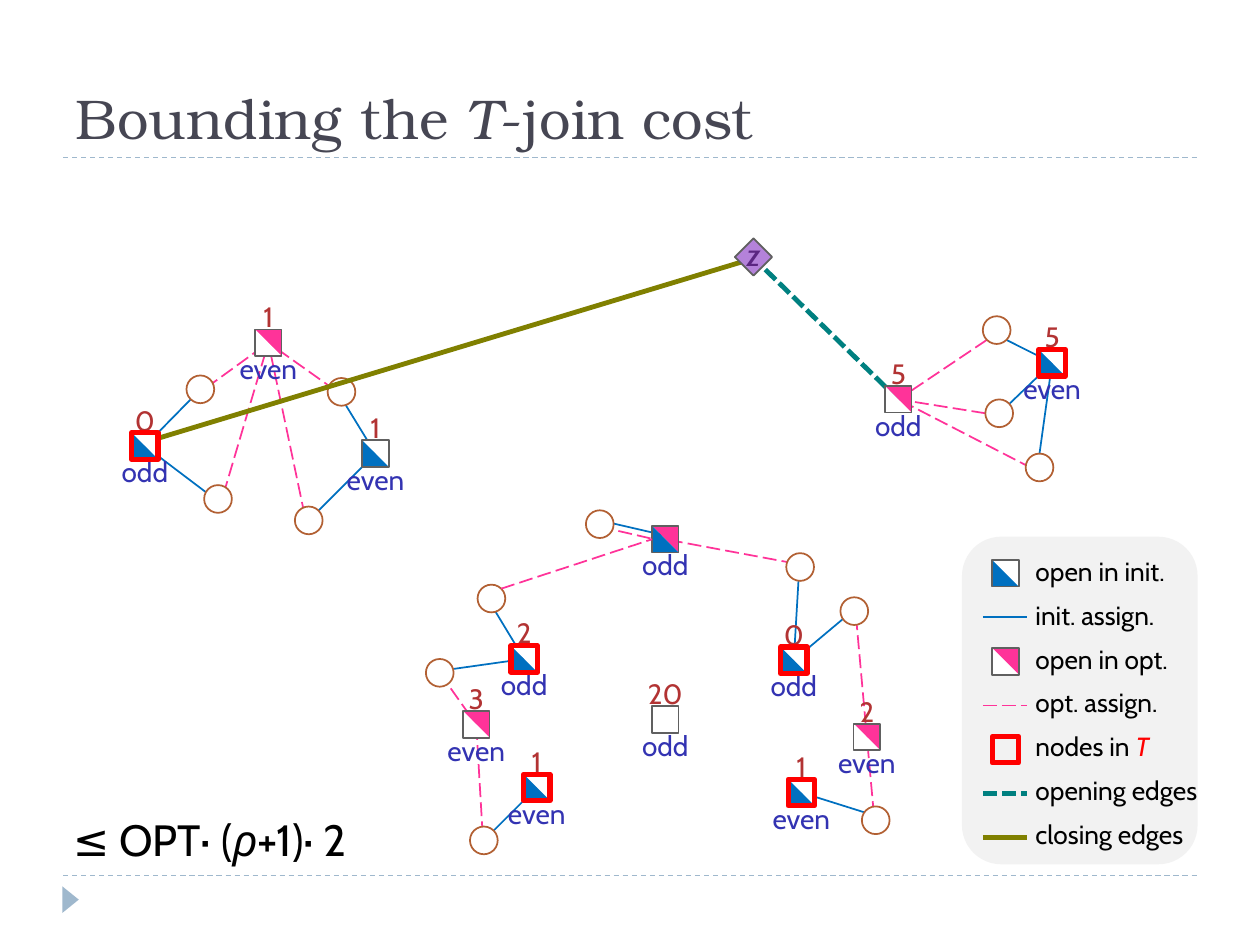
from dataclasses import dataclass
from math import cos, pi, sin
from typing import NamedTuple, Optional

from pptx import Presentation
from pptx.dml.color import RGBColor
from pptx.enum.dml import MSO_LINE
from pptx.enum.shapes import MSO_CONNECTOR, MSO_SHAPE
from pptx.enum.text import MSO_ANCHOR, MSO_AUTO_SIZE, PP_ALIGN
from pptx.oxml.ns import qn
from pptx.util import Inches, Pt

STRAIGHT = MSO_CONNECTOR.STRAIGHT
RECT, ROUND, OVAL = MSO_SHAPE.RECTANGLE, MSO_SHAPE.ROUNDED_RECTANGLE, MSO_SHAPE.OVAL
HALF, TRIANGLE = MSO_SHAPE.RIGHT_TRIANGLE, MSO_SHAPE.ISOSCELES_TRIANGLE
DASH, LONG_DASH, SHORT_DASH = MSO_LINE.DASH, MSO_LINE.LONG_DASH, MSO_LINE.SQUARE_DOT
LEFT, CENTER = PP_ALIGN.LEFT, PP_ALIGN.CENTER
BOTTOM, NO_FIT = MSO_ANCHOR.BOTTOM, MSO_AUTO_SIZE.NONE


class Stroke(NamedTuple):
    color: str
    width: float
    dash: Optional[MSO_LINE] = None


@dataclass(frozen=True)
class Theme:
    heading: str = "TeX Gyre Bonum"
    body: str = "Cabin"
    title_size: int = 32
    formula_size: int = 25
    root_size: int = 18
    label_size: int = 16
    legend_size: int = 15
    title: str = "464653"
    text: str = "000000"
    white: str = "FFFFFF"
    init: str = "0070C0"
    opt: str = "FF3399"
    count: str = "B23333"
    parity: str = "3333B2"
    in_t: str = "FF0000"
    root: str = "B482DA"
    root_text: str = "5B2682"
    panel: str = "F2F2F2"
    accent: str = "9FB8CD"
    rule: Stroke = Stroke("9FB8CD", 0.75, DASH)
    init_edge: Stroke = Stroke("0070C0", 1)
    opt_edge: Stroke = Stroke("FF3399", 1, LONG_DASH)
    opening: Stroke = Stroke("008080", 2.75, SHORT_DASH)
    closing: Stroke = Stroke("808000", 2.75)
    client: Stroke = Stroke("B26033", 1)
    frame: Stroke = Stroke("606060", 1)
    t_frame: Stroke = Stroke("FF0000", 3)


class Run(NamedTuple):
    text: str
    color: str
    italic: bool = False


@dataclass(frozen=True)
class Facility:
    x: float  # centre
    y: float
    count: str = ""
    parity: str = ""
    init: bool = False
    opt: bool = False
    in_t: bool = False


class Edge(NamedTuple):
    facility: str
    client: str
    site: Optional[int]  # eighth turns counter-clockwise from the top; None is the centre
    shift: float = 0


TH = Theme()
SIDE, DIAMETER = 0.21, 0.22

FACILITIES = {
    "A": Facility(1.15, 3.54, "0", "odd", init=True, in_t=True),
    "B": Facility(2.13, 2.72, "1", "even", opt=True),
    "C": Facility(2.98, 3.6, "1", "even", init=True),
    "D": Facility(7.13, 3.17, "5", "odd", opt=True),
    "E": Facility(8.35, 2.88, "5", "even", init=True, in_t=True),
    "F": Facility(5.28, 4.28, "", "odd", init=True, opt=True),
    "G": Facility(4.16, 5.23, "2", "odd", init=True, in_t=True),
    "H": Facility(3.78, 5.75, "3", "even", opt=True),
    "I": Facility(4.26, 6.25, "1", "even", init=True, in_t=True),
    "J": Facility(6.3, 5.24, "0", "odd", init=True, in_t=True),
    "K": Facility(6.36, 6.29, "1", "even", init=True, in_t=True),
    "L": Facility(6.88, 5.85, "2", "even", opt=True),
    "M": Facility(5.28, 5.71, "20", "odd"),
}
CLIENTS = {
    "a": (1.59, 3.09), "b": (1.73, 3.96), "c": (2.45, 4.13), "d": (2.71, 3.11),
    "e": (7.91, 2.62), "f": (7.93, 3.28), "g": (8.25, 3.71), "h": (4.76, 4.16),
    "i": (3.9, 4.75), "j": (3.49, 5.34), "k": (3.84, 6.67), "l": (6.35, 4.5),
    "m": (6.78, 4.85), "n": (6.95, 6.51),
}
INIT_EDGES = [
    Edge("A", "a", 7), Edge("A", "b", 5), Edge("C", "c", 3), Edge("C", "d", 1),
    Edge("E", "e", 5), Edge("E", "f", 3), Edge("E", "g", 0), Edge("F", "h", None, -0.03),
    Edge("G", "i", 1), Edge("G", "j", 2), Edge("I", "k", 3), Edge("J", "l", 0),
    Edge("J", "m", 7), Edge("K", "n", 6),
]
OPT_EDGES = [
    Edge("B", "a", 3), Edge("B", "b", 4), Edge("B", "c", 4), Edge("B", "d", 5),
    Edge("D", "e", 3), Edge("D", "f", 2), Edge("D", "g", 5), Edge("F", "h", None, 0.02),
    Edge("F", "l", 6), Edge("H", "j", None), Edge("H", "k", 4), Edge("L", "m", 0),
    Edge("L", "n", 4),
]


def stroke_line(line, stroke: Stroke) -> None:
    line.color.rgb = RGBColor.from_string(stroke.color)
    line.width = Pt(stroke.width)
    if stroke.dash:
        line.dash_style = stroke.dash


def add_line(s, start, end, stroke: Stroke):
    c = s.shapes.add_connector(STRAIGHT, *map(Inches, (*start, *end)))
    stroke_line(c.line, stroke)
    sp_pr = c._element.spPr
    sp_pr.append(sp_pr.makeelement(qn("a:effectLst"), {}))
    return c


def add_shape(s, kind, x, y, w, h, fill=None, stroke=None, rotation=0):
    """Draw a preset shape centred on x, y."""
    sp = s.shapes.add_shape(kind, *map(Inches, (x - w / 2, y - h / 2, w, h)))
    sp.shadow.inherit = False
    sp.rotation = rotation
    if fill:
        sp.fill.solid()
        sp.fill.fore_color.rgb = RGBColor.from_string(fill)
    else:
        sp.fill.background()
    if stroke:
        stroke_line(sp.line, stroke)
    else:
        sp.line.fill.background()
    return sp


def write(p, runs, size: int, font: str = TH.body) -> None:
    for run in runs:
        r = p.add_run()
        r.text = run.text
        r.font.color.rgb = RGBColor.from_string(run.color)
        formats = {"name": font, "size": Pt(size), "italic": run.italic}
        for name, value in formats.items():
            setattr(r.font, name, value)


def add_text(s, box, paragraphs, size: int, align=LEFT, before: float = 0) -> None:
    tf = s.shapes.add_textbox(*map(Inches, box)).text_frame
    tf.word_wrap = False
    for i, runs in enumerate(paragraphs):
        p = tf.add_paragraph() if i else tf.paragraphs[0]
        p.alignment, p.space_before = align, Pt(before)
        write(p, runs, size)


def add_square(s, f: Facility):
    """Draw a facility's two halves and its frame, and return the frame."""
    if f.init or f.opt or f.count:
        add_shape(s, HALF, f.x, f.y, SIDE, SIDE, TH.opt if f.opt else TH.white, rotation=180)
        add_shape(s, HALF, f.x, f.y, SIDE, SIDE, TH.init if f.init else TH.white)
    return add_shape(s, RECT, f.x, f.y, SIDE, SIDE, stroke=TH.t_frame if f.in_t else TH.frame)


def add_labels(s, f: Facility) -> None:
    for text, color, w, dy in ((f.count, TH.count, 0.56, -0.39), (f.parity, TH.parity, 0.76, 0.02)):
        if text:
            add_text(s, (f.x - w / 2, f.y + dy, w, 0.4), [[Run(text, color)]], TH.label_size, CENTER)


def site_point(client: str, site: Optional[int]) -> tuple[float, float]:
    x, y = CLIENTS[client]
    if site is None:
        return x, y
    turn = site * pi / 4
    return x - DIAMETER / 2 * sin(turn), y - DIAMETER / 2 * cos(turn)


def add_edges(s, edges: list[Edge], stroke: Stroke) -> None:
    for e in edges:
        f, (x, y) = FACILITIES[e.facility], site_point(e.client, e.site)
        add_line(s, (x, y + e.shift), (f.x, f.y + e.shift), stroke)


def add_graph(s) -> None:
    add_line(s, (7.14, 3.18), (5.9, 1.97), TH.opening)
    add_edges(s, INIT_EDGES, TH.init_edge)
    add_edges(s, OPT_EDGES, TH.opt_edge)
    for x, y in CLIENTS.values():
        add_shape(s, OVAL, x, y, DIAMETER, DIAMETER, TH.white, TH.client)
    add_line(s, (1.15, 3.51), (5.95, 2.06), TH.closing)
    for f in FACILITIES.values():
        add_labels(s, f)
    frames = {name: add_square(s, f) for name, f in FACILITIES.items()}
    add_line(s, site_point("i", 7), (5.18, 4.28), TH.opt_edge).end_connect(frames["F"], 1)
    add_shape(s, RECT, 5.98, 2.04, SIDE, SIDE, TH.root, TH.frame, 45)
    add_text(s, (5.83, 1.82, 0.32, 0.4), [[Run("z", TH.root_text, True)]], TH.root_size)


def add_legend(s) -> None:
    add_shape(s, ROUND, 8.57, 5.56, 1.87, 2.6, TH.panel)
    x, top, pitch = 7.98, 4.55, 0.35
    entries = [
        ("open in init.", Facility(x, top, init=True)),
        ("init. assign.", TH.init_edge),
        ("open in opt.", Facility(x, top + 2 * pitch, opt=True)),
        ("opt. assign.", TH.opt_edge),
        ("nodes in ", Facility(x, top + 4 * pitch, in_t=True)),
        ("opening edges", TH.opening),
        ("closing edges", TH.closing),
    ]
    paragraphs = [[Run(text, TH.text)] for text, _ in entries]
    paragraphs[4].append(Run("T", TH.in_t, True))
    for i, (_, key) in enumerate(entries):
        if isinstance(key, Facility):
            add_square(s, key)
        else:
            y = top + i * pitch
            add_line(s, (7.8, y), (8.15, y), key)
    add_text(s, (8.12, 4.36, 1.6, 2.54), paragraphs, TH.legend_size, before=7)


def add_title(s) -> None:
    sp = s.shapes.title
    box = {"left": 0.5, "top": 0.17, "width": 9, "height": 1.08}
    for name, value in box.items():
        setattr(sp, name, Inches(value))
    tf = sp.text_frame
    tf.vertical_anchor, tf.auto_size = BOTTOM, NO_FIT
    p = tf.paragraphs[0]
    p.alignment = LEFT
    runs = [Run("Bounding the ", TH.title), Run("T", TH.title, True), Run("-join cost", TH.title)]
    write(p, runs, TH.title_size, TH.heading)


def main() -> None:
    prs = Presentation()
    prs.slide_width, prs.slide_height = Inches(10), Inches(7.5)
    s = prs.slides.add_slide(prs.slide_layouts[5])
    for y in (6.95, 1.25):
        add_line(s, (0.5, y), (9.5, y), TH.rule)
    add_shape(s, TRIANGLE, 0.56, 7.14, 0.21, 0.13, TH.accent, rotation=90)
    add_title(s)
    add_graph(s)
    add_legend(s)
    formula = [Run("≤ OPT· (", TH.text), Run("ρ", TH.text, True), Run("+1)· 2", TH.text)]
    add_text(s, (0.48, 6.4, 2.67, 0.54), [formula], TH.formula_size)
    prs.save("out.pptx")


if __name__ == "__main__":
    main()
